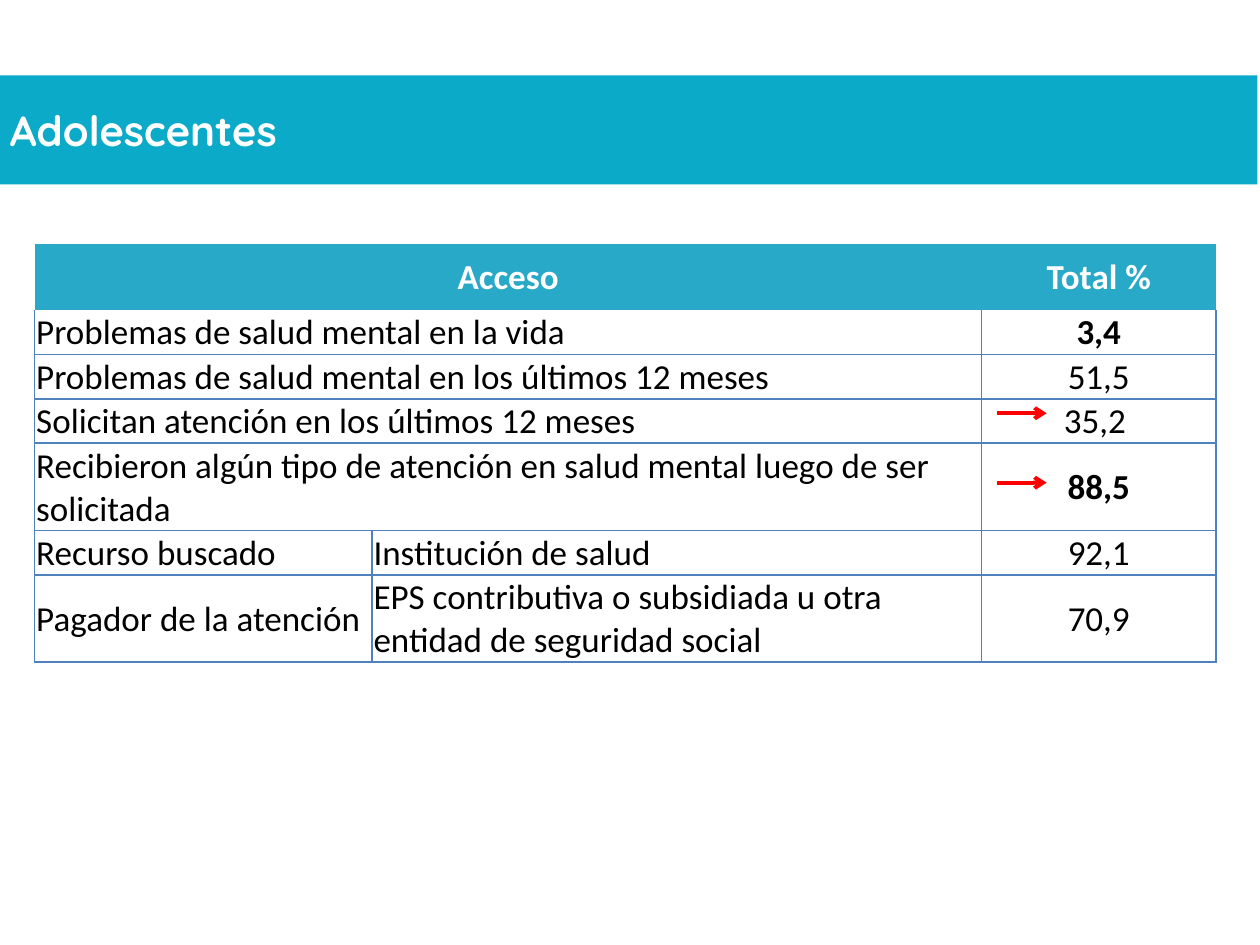
from lxml import etree
from pptx import Presentation
from pptx.dml.color import RGBColor
from pptx.enum.shapes import MSO_CONNECTOR, MSO_SHAPE
from pptx.enum.text import MSO_ANCHOR, PP_ALIGN
from pptx.oxml.ns import qn
from pptx.util import Cm, Pt

RECTANGLE = MSO_SHAPE.RECTANGLE
STRAIGHT = MSO_CONNECTOR.STRAIGHT
MIDDLE, BOTTOM = MSO_ANCHOR.MIDDLE, MSO_ANCHOR.BOTTOM
LEFT, CENTER = PP_ALIGN.LEFT, PP_ALIGN.CENTER

BANNER_BLUE = RGBColor(0x0A, 0xAA, 0xC8)
HEADER_BLUE = RGBColor(0x28, 0xA9, 0xC8)
BORDER_BLUE = RGBColor(0x4F, 0x81, 0xBD)
WHITE = RGBColor(0xFF, 0xFF, 0xFF)
BLACK = RGBColor(0, 0, 0)
RED = RGBColor(0xFF, 0, 0)

COLUMN_WIDTHS = [6.8, 12.29, 4.72]
HEADER_HEIGHT, ONE_LINE, TWO_LINES = 1.33, 0.89, 1.75

# Label, detail (empty when the label spans both columns), total, row height
HEADER = ("Acceso", "", "Total %", HEADER_HEIGHT)
ROWS = [
    ("Problemas de salud mental en la vida", "", "3,4", ONE_LINE),
    ("Problemas de salud mental en los últimos 12 meses", "", "51,5", ONE_LINE),
    ("Solicitan atención en los últimos 12 meses", "", "35,2 ", ONE_LINE),
    ("Recibieron algún tipo de atención en salud mental luego de ser solicitada",
     "", "88,5", TWO_LINES),
    ("Recurso buscado", "Institución de salud", "92,1", ONE_LINE),
    ("Pagador de la atención",
     "EPS contributiva o subsidiada u otra entidad de seguridad social",
     "70,9", TWO_LINES),
]
BOLD_TOTALS = {"3,4", "88,5"}


def style_paragraph(paragraph, font_name, size, color, bold, align):
    paragraph.alignment = align
    font = paragraph.font
    font.name, font.size, font.bold = font_name, Pt(size), bold
    font.color.rgb = color


def add_banner(slide, title):
    banner = slide.shapes.add_shape(RECTANGLE, Cm(-0.05), Cm(1.52), Cm(25.4), Cm(2.2))
    banner.shadow.inherit = False
    banner.fill.solid()
    banner.fill.fore_color.rgb = BANNER_BLUE
    banner.line.fill.background()
    frame = banner.text_frame
    frame.vertical_anchor = MIDDLE
    frame.text = title
    style_paragraph(frame.paragraphs[0], "Quicksand", 24, WHITE, True, LEFT)


def set_borders(cell, visible_sides):
    properties = cell._tc.get_or_add_tcPr()
    for side in "LRTB":
        border = etree.SubElement(properties, qn(f"a:ln{side}"), w=str(Pt(1)))
        if side in visible_sides:
            fill = etree.SubElement(border, qn("a:solidFill"))
            etree.SubElement(fill, qn("a:srgbClr"), val=str(BORDER_BLUE))
        else:
            etree.SubElement(border, qn("a:noFill"))


def format_cell(cell, row, column, text):
    is_header = row == 0
    # Only the body is ruled, and its first row has no line under the header
    set_borders(cell, "" if is_header else "LRB" if row == 1 else "LRTB")
    if is_header:
        cell.fill.solid()
        cell.fill.fore_color.rgb = HEADER_BLUE
    else:
        cell.fill.background()
    cell.margin_left = cell.margin_right = cell.margin_top = Cm(0.03)
    cell.margin_bottom = 0
    cell.vertical_anchor = MIDDLE
    if not is_header and column < 2 and not (column == 0 and row >= 5):
        cell.vertical_anchor = BOTTOM
    if not text:
        return
    cell.text = text
    style_paragraph(cell.text_frame.paragraphs[0], "Calibri", 20,
                    WHITE if is_header else BLACK,
                    is_header or text in BOLD_TOTALS,
                    CENTER if is_header or column == 2 else LEFT)


def add_access_table(slide):
    records = [HEADER, *ROWS]
    frame = slide.shapes.add_table(
        len(records), len(COLUMN_WIDTHS), Cm(0.7), Cm(4.92),
        Cm(sum(COLUMN_WIDTHS)), Cm(sum(record[3] for record in records)))
    table = frame.table
    table.horz_banding = False
    for column, width in zip(table.columns, COLUMN_WIDTHS):
        column.width = Cm(width)
    for row, (*texts, height) in enumerate(records):
        table.rows[row].height = Cm(height)
        for column, text in enumerate(texts):
            format_cell(table.cell(row, column), row, column, text)
        if not texts[1]:
            table.cell(row, 0).merge(table.cell(row, 1))


def add_red_arrow(slide, y):
    arrow = slide.shapes.add_connector(STRAIGHT, Cm(20.1), Cm(y), Cm(21.1), Cm(y))
    arrow.line.color.rgb = RED
    arrow.line.width = Pt(2.25)
    etree.SubElement(arrow.line._get_or_add_ln(), qn("a:tailEnd"), type="arrow")
    etree.SubElement(arrow._element.spPr, qn("a:effectLst"))


def main():
    presentation = Presentation()
    presentation.slide_width, presentation.slide_height = Cm(25.4), Cm(19.05)
    slide = presentation.slides.add_slide(presentation.slide_layouts[6])

    add_banner(slide, "Adolescentes")
    add_access_table(slide)
    # Arrows pointing at the totals for care requested and received
    for y in (9.73, 8.33):
        add_red_arrow(slide, y)

    presentation.save("out.pptx")


if __name__ == "__main__":
    main()
